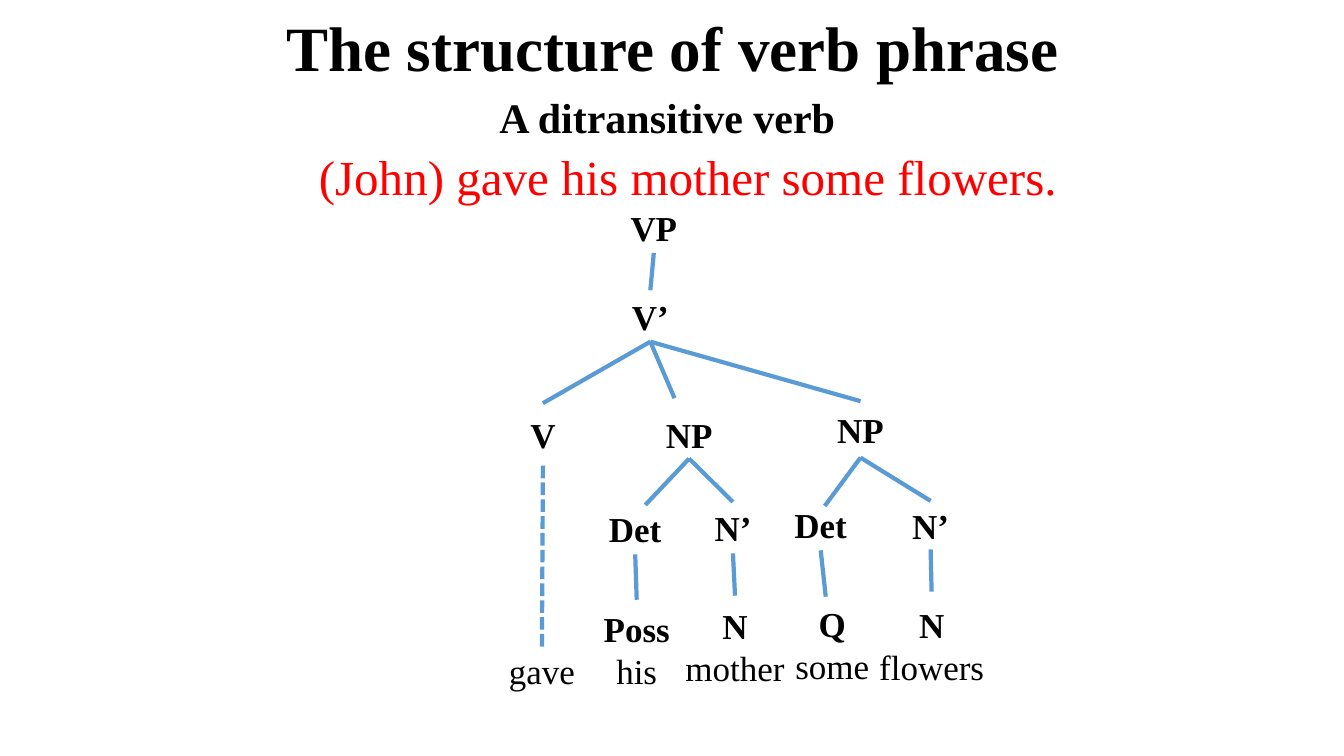
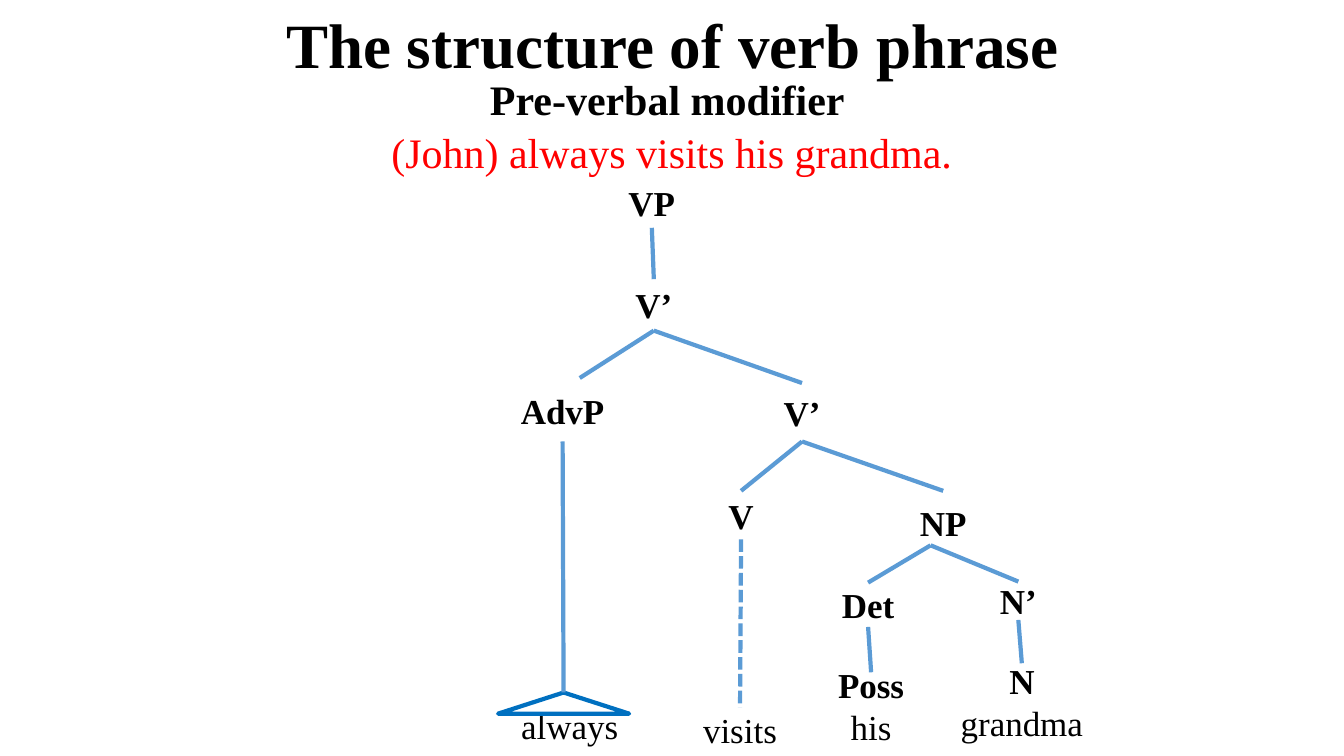
"""Build two slides with syntax trees of English verb phrases."""
from lxml.etree import SubElement
from pptx import Presentation
from pptx.dml.color import RGBColor
from pptx.enum.dml import MSO_LINE
from pptx.enum.shapes import MSO_CONNECTOR, MSO_SHAPE
from pptx.enum.text import MSO_ANCHOR, PP_ALIGN
from pptx.oxml.ns import qn
from pptx.util import Inches, Pt

FONT = "Times New Roman"
BLACK, RED, WHITE = "000000", "FF0000", "FFFFFF"
BRANCH_BLUE, TRIANGLE_BLUE = "5B9BD5", "0070C0"
TITLE = "The structure of verb phrase"
BOTTOM, TOP = 2, 0

DITRANSITIVE = {
    "title_top": 0.16,
    "subtitle": ("A ditransitive verb", 0.92),
    "sentence": ("(John) gave his mother some flowers.", 35, (2.65, 1.42, 8.35, 0.65)),
    "categories": {
        "VP": ("VP", (6.05, 2, 0.87, 0.51)),
        "V bar": ("V’", (5.95, 2.88, 1, 0.51)),
        "V": ("V", (4.95, 4, 0.87, 0.62)),
        "NP mother": ("NP", (6.4, 4.07, 0.87, 0.48)),
        "NP flowers": ("NP", (7.95, 3.98, 1.17, 0.56)),
        "Det his": ("Det", (5.8, 4.99, 1, 0.51)),
        "N bar mother": ("N’", (6.77, 4.98, 1, 0.51)),
        "Det some": ("Det", (7.64, 4.95, 1, 0.51)),
        "N bar flowers": ("N’", (8.73, 4.97, 1, 0.48)),
    },
    "words": {
        "gave": ("gave", (4.88, 6.44, 0.99, 0.43)),
        "his": ("Poss\nhis", (5.86, 5.95, 0.91, 0.99)),
        "mother": ("N\nmother", (6.67, 5.91, 1.24, 1)),
        "some": ("Q\nsome", (7.78, 5.92, 0.95, 0.94)),
        "flowers": ("N\nflowers", (8.58, 5.87, 1.32, 1.07)),
    },
    "triangles": {},
    "branches": [
        ("VP", "V bar"),
        ("V bar", "V"),
        ("V bar", (6.69, 3.95)),
        ("V bar", "NP flowers"),
        ("NP mother", (6.4, 5.01)),
        ("NP mother", "N bar mother"),
        ("NP flowers", (8.18, 5.02)),
        ("NP flowers", "N bar flowers"),
        ("Det his", "his"),
        ("N bar mother", "mother"),
        ("Det some", (8.19, 5.92)),
        ("N bar flowers", "flowers"),
    ],
    "dashed": [("V", "gave")],
}

PRE_VERBAL = {
    "title_top": 0.13,
    "subtitle": ("Pre-verbal modifier", 0.75),
    "sentence": ("(John) always visits his grandma.", 30, (3.2, 1.18, 6.93, 0.65)),
    "categories": {
        "VP": ("VP", (6.03, 1.75, 0.87, 0.51)),
        "V bar": ("V’", (6.05, 2.77, 0.87, 0.51)),
        "AdvP": ("AdvP", (5.01, 3.76, 1.14, 0.62)),
        "lower V bar": ("V’", (7.17, 3.8, 1.57, 0.58)),
        "V": ("V", (6.82, 4.87, 1.06, 0.48)),
        "NP": ("NP", (8.77, 4.87, 1.17, 0.62)),
        "Det": ("Det", (8.08, 5.78, 1.06, 0.44)),
        "N bar": ("N’", (9.57, 5.77, 1.06, 0.38)),
    },
    "words": {
        "always": ("always", (4.96, 6.98, 1.38, 0.44)),
        "visits": ("visits", (6.81, 7.02, 1.06, 0.44)),
        "his": ("Poss\nhis", (8.11, 6.67, 1.06, 0.66)),
        "grandma": ("N\ngrandma", (9.36, 6.58, 1.55, 0.75)),
    },
    "triangles": {"phrase triangle": (4.94, 6.87, 1.3, 0.21)},
    "branches": [
        ("VP", "V bar"),
        ("V bar", (5.75, 3.75)),
        ("V bar", "lower V bar"),
        ("lower V bar", "V"),
        ("lower V bar", "NP"),
        ((9.23, 5.41), "Det"),
        ((9.23, 5.41), "N bar"),
        ("AdvP", "phrase triangle"),
        ("Det", "his"),
        ("N bar", "grandma"),
    ],
    "dashed": [("V", "visits")],
}


def color(value):
    return RGBColor.from_string(value)


def inches(lengths):
    return [Inches(length) for length in lengths]


def write_text(shape, text, size, text_color=BLACK, bold_lines=0, line_spacing=None):
    frame = shape.text_frame
    frame.word_wrap = True
    frame.vertical_anchor = MSO_ANCHOR.MIDDLE
    frame.margin_left = frame.margin_right = 0
    frame.margin_top = frame.margin_bottom = 0
    frame.text = text
    for index, paragraph in enumerate(frame.paragraphs):
        paragraph.alignment = PP_ALIGN.CENTER
        paragraph.line_spacing = line_spacing
        for run in paragraph.runs:
            run.font.name = FONT
            run.font.size = Pt(size)
            run.font.bold = index < bold_lines
            run.font.color.rgb = color(text_color)


def add_label(slide, text, box, size=25, bold_lines=1, line_spacing=None):
    shape = slide.shapes.add_textbox(*inches(box))
    write_text(shape, text, size, BLACK, bold_lines, line_spacing)
    return shape


def add_sentence(slide, text, size, box):
    shape = slide.shapes.add_shape(MSO_SHAPE.RECTANGLE, *inches(box))
    shape.shadow.inherit = False
    shape.fill.solid()
    shape.fill.fore_color.rgb = color(WHITE)
    shape.line.fill.background()
    write_text(shape, text, size, RED)


def add_triangle(slide, box):
    shape = slide.shapes.add_shape(MSO_SHAPE.ISOSCELES_TRIANGLE, *inches(box))
    shape.shadow.inherit = False
    shape.fill.background()
    shape.line.color.rgb = color(TRIANGLE_BLUE)
    shape.line.width = Pt(3)
    return shape


def add_branch(slide, nodes, parent, child, dashed=False):
    start = (0, 0) if parent in nodes else parent
    end = (0, 0) if child in nodes else child
    connector = slide.shapes.add_connector(
        MSO_CONNECTOR.STRAIGHT, *inches(start), *inches(end))
    if parent in nodes:
        connector.begin_connect(nodes[parent], BOTTOM)
    if child in nodes:
        connector.end_connect(nodes[child], TOP)
    connector.line.color.rgb = color(BRANCH_BLUE)
    connector.line.width = Pt(3)
    if dashed:
        connector.line.dash_style = MSO_LINE.SQUARE_DOT
    SubElement(connector.element.spPr, qn("a:effectLst"))


def add_tree(slide, tree):
    nodes = {}
    for name, (text, box) in tree["categories"].items():
        nodes[name] = add_label(slide, text, box)
    for name, (text, box) in tree["words"].items():
        nodes[name] = add_label(slide, text, box, bold_lines=text.count("\n"))
    for name, box in tree["triangles"].items():
        nodes[name] = add_triangle(slide, box)
    for parent, child in tree["branches"]:
        add_branch(slide, nodes, parent, child)
    for parent, child in tree["dashed"]:
        add_branch(slide, nodes, parent, child, dashed=True)


def add_tree_slide(presentation, tree):
    slide = presentation.slides.add_slide(presentation.slide_layouts[6])
    add_label(slide, TITLE, (0.92, tree["title_top"], 11.5, 0.7), 45, line_spacing=0.9)
    subtitle, top = tree["subtitle"]
    add_label(slide, subtitle, (0.87, top, 11.5, 0.53), 30, line_spacing=0.9)
    add_sentence(slide, *tree["sentence"])
    add_tree(slide, tree)


def main():
    presentation = Presentation()
    presentation.slide_width = Inches(13.33)
    presentation.slide_height = Inches(7.5)
    for tree in (DITRANSITIVE, PRE_VERBAL):
        add_tree_slide(presentation, tree)
    presentation.save("out.pptx")


if __name__ == "__main__":
    main()
